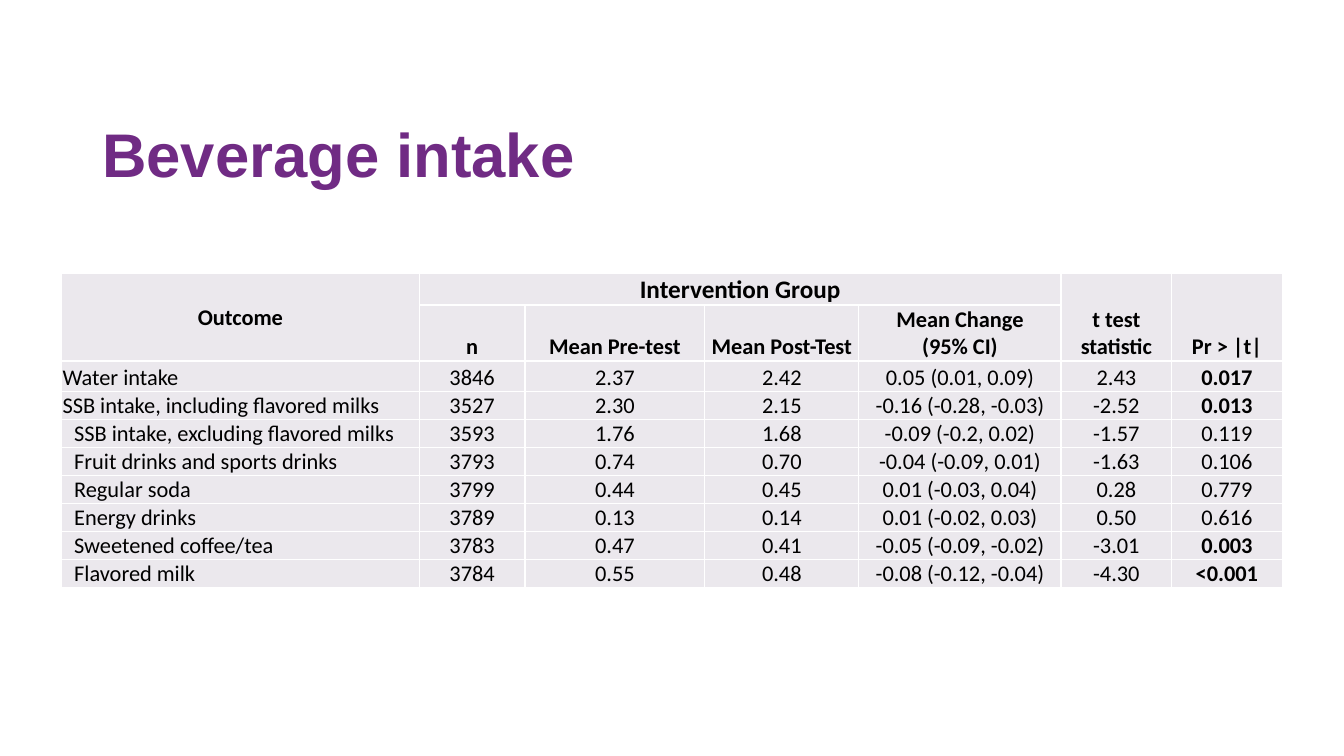
from lxml.etree import SubElement
from pptx import Presentation
from pptx.dml.color import RGBColor
from pptx.enum.text import MSO_VERTICAL_ANCHOR as Anchor, PP_PARAGRAPH_ALIGNMENT as Align
from pptx.oxml.ns import qn
from pptx.util import Pt

PURPLE = RGBColor(0x70, 0x2B, 0x84)
BLACK = RGBColor(0, 0, 0)
LILAC = RGBColor(0xEB, 0xE8, 0xED)
WHITE = RGBColor(0xFF, 0xFF, 0xFF)

COLUMN_WIDTHS = [255.5, 75.5, 128.5, 110, 144.5, 79, 79]
ROW_HEIGHTS = [22, 40, 22] + [20] * 7
SIGNIFICANCE = 0.05

GROUP_HEADINGS = ["Outcome", "Intervention Group", "", "", "", "t test statistic", "Pr > |t|"]
MEASURE_HEADINGS = ["", "n", "Mean Pre-test", "Mean Post-Test", "Mean Change\v(95% CI)", "", ""]
MERGES = [((0, 0), (1, 0)), ((0, 1), (0, 4)), ((0, 5), (1, 5)), ((0, 6), (1, 6))]
MAIN_OUTCOMES = 2
OUTCOMES = [
    ["Water intake", "3846", "2.37", "2.42", "0.05 (0.01, 0.09)", "2.43", "0.017"],
    ["SSB intake, including flavored milks", "3527", "2.30", "2.15",
     "-0.16 (-0.28, -0.03)", "-2.52", "0.013"],
    ["SSB intake, excluding flavored milks", "3593", "1.76", "1.68",
     "-0.09 (-0.2, 0.02)", "-1.57", "0.119"],
    ["Fruit drinks and sports drinks", "3793", "0.74", "0.70",
     "-0.04 (-0.09, 0.01)", "-1.63", "0.106"],
    ["Regular soda", "3799", "0.44", "0.45", "0.01 (-0.03, 0.04)", "0.28", "0.779"],
    ["Energy drinks", "3789", "0.13", "0.14", "0.01 (-0.02, 0.03)", "0.50", "0.616"],
    ["Sweetened coffee/tea", "3783", "0.47", "0.41", "-0.05 (-0.09, -0.02)", "-3.01", "0.003"],
    ["Flavored milk", "3784", "0.55", "0.48", "-0.08 (-0.12, -0.04)", "-4.30", "<0.001"],
]


def apply_format(target, values):
    for attribute, value in values.items():
        setattr(target, attribute, value)


def format_font(font, color, **values):
    apply_format(font, values)
    font.color.rgb = color


def add_title(slide, wording):
    title = slide.shapes.add_textbox(Pt(66), Pt(60.5), Pt(828), Pt(104.5))
    frame = title.text_frame
    apply_format(frame, {"word_wrap": True, "vertical_anchor": Anchor.MIDDLE})
    paragraph = frame.paragraphs[0]
    paragraph.text = wording
    paragraph.line_spacing = 0.9
    format_font(paragraph.font, PURPLE, name="Arial", size=Pt(44), bold=True)


def add_borders(cell):
    properties = cell._tc.get_or_add_tcPr()
    for side in ("a:lnL", "a:lnR", "a:lnT", "a:lnB"):
        border = SubElement(properties, qn(side), w=str(Pt(1)))
        fill = SubElement(border, qn("a:solidFill"))
        SubElement(fill, qn("a:srgbClr"), val=str(WHITE))


def fill_cell(cell, wording, size=16, bold=False, align=Align.CENTER,
              anchor=Anchor.BOTTOM, indent=0.7):
    add_borders(cell)
    cell.fill.solid()
    cell.fill.fore_color.rgb = LILAC
    apply_format(cell, {
        "margin_left": Pt(indent), "margin_right": Pt(0.7),
        "margin_top": Pt(0.7), "margin_bottom": 0, "vertical_anchor": anchor,
    })
    cell.text = wording
    paragraph = cell.text_frame.paragraphs[0]
    paragraph.alignment = align
    format_font(paragraph.font, BLACK, name="Calibri", size=Pt(size), bold=bold)


def fill_headings(table):
    for row, headings in enumerate((GROUP_HEADINGS, MEASURE_HEADINGS)):
        for column, heading in enumerate(headings):
            fill_cell(table.cell(row, column), heading, bold=True,
                      size=18 if heading == "Intervention Group" else 16,
                      anchor=Anchor.MIDDLE if heading == "Outcome" else Anchor.BOTTOM)
    for first, last in MERGES:
        table.cell(*first).merge(table.cell(*last))


def fill_outcomes(table):
    for index, (outcome, *statistics, p_value) in enumerate(OUTCOMES):
        row = index + 2
        fill_cell(table.cell(row, 0), outcome, align=Align.LEFT,
                  indent=0.7 if index < MAIN_OUTCOMES else 9)
        for column, statistic in enumerate(statistics, 1):
            fill_cell(table.cell(row, column), statistic)
        significant = float(p_value.lstrip("<")) < SIGNIFICANCE
        fill_cell(table.cell(row, 6), p_value, bold=significant)


def add_intake_table(slide):
    table = slide.shapes.add_table(
        len(ROW_HEIGHTS), len(COLUMN_WIDTHS), Pt(44), Pt(195.5),
        Pt(sum(COLUMN_WIDTHS)), Pt(sum(ROW_HEIGHTS))).table
    apply_format(table, {"first_row": False, "horz_banding": False})
    for column, width in zip(table.columns, COLUMN_WIDTHS):
        column.width = Pt(width)
    for row, height in zip(table.rows, ROW_HEIGHTS):
        row.height = Pt(height)
    fill_headings(table)
    fill_outcomes(table)


def main():
    deck = Presentation()
    apply_format(deck, {"slide_width": Pt(960), "slide_height": Pt(540)})
    slide = deck.slides.add_slide(deck.slide_layouts[6])
    add_title(slide, "Beverage intake")
    add_intake_table(slide)
    deck.save("out.pptx")


if __name__ == "__main__":
    main()
